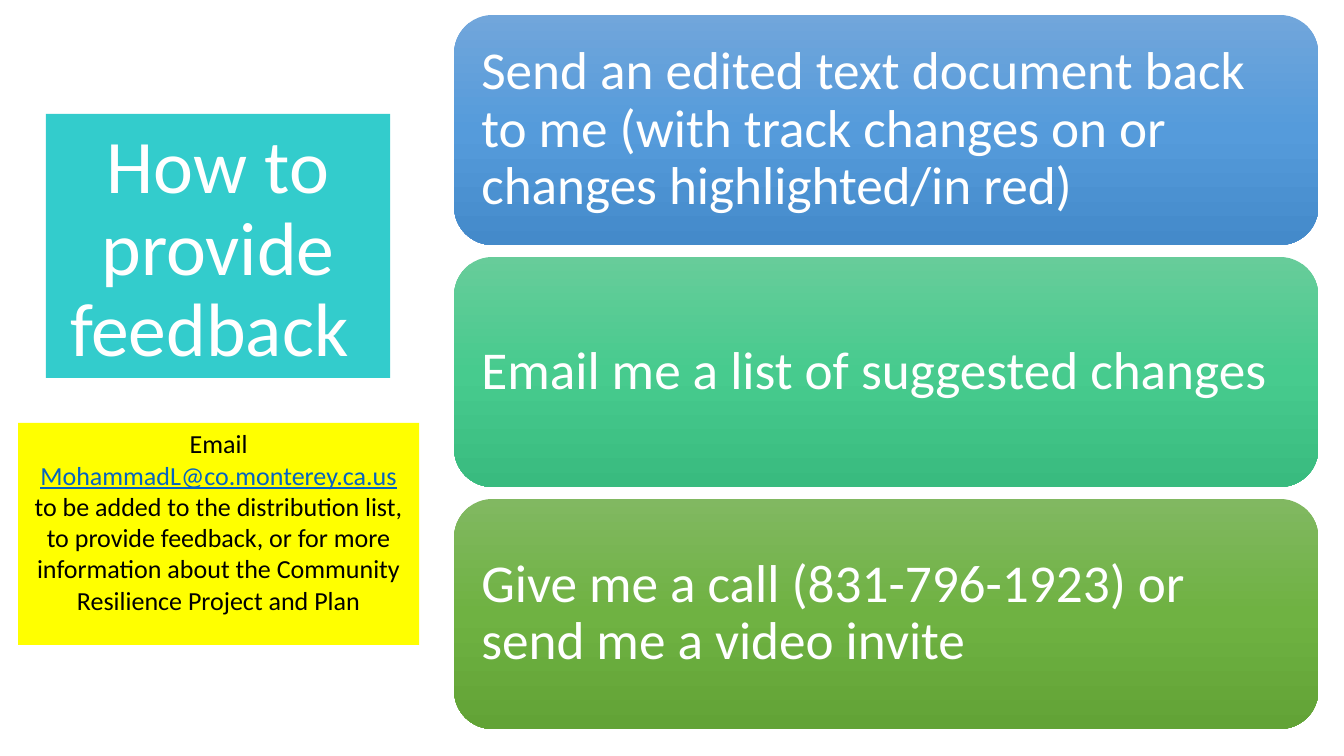
from copy import deepcopy

from pptx import Presentation
from pptx.dml.color import RGBColor
from pptx.enum.shapes import MSO_SHAPE as Shape
from pptx.enum.text import MSO_ANCHOR as Anchor, PP_ALIGN as Align
from pptx.oxml.ns import qn
from pptx.util import Inches, Pt

WHITE = RGBColor(0xFF, 0xFF, 0xFF)
BLACK = RGBColor(0x00, 0x00, 0x00)
TEAL = RGBColor(0x33, 0xCC, 0xCC)
YELLOW = RGBColor(0xFF, 0xFF, 0x00)
LINK_BLUE = RGBColor(0x05, 0x63, 0xC1)
BLUES = [RGBColor(0x71, 0xA6, 0xDB), RGBColor(0x55, 0x9B, 0xDB), RGBColor(0x44, 0x8A, 0xCA)]
MINTS = [RGBColor(0x67, 0xCC, 0x9A), RGBColor(0x47, 0xCB, 0x8E), RGBColor(0x39, 0xBB, 0x7F)]
GREENS = [RGBColor(0x81, 0xB8, 0x61), RGBColor(0x6F, 0xB2, 0x42), RGBColor(0x62, 0xA3, 0x36)]

# Content
TITLE = "How to provide feedback "
CONTACT = [
    ("Email ", BLACK, False),
    ("MohammadL@co.monterey.ca.us", LINK_BLUE, True),
    (" to be added to the distribution list, to provide feedback, or for more "
     "information about the Community Resilience Project and Plan", BLACK, False),
]
OPTIONS = [
    ("Send an edited text document back to me (with track changes on or "
     "changes highlighted/in red)", BLUES),
    ("Email me a list of suggested changes", MINTS),
    ("Give me a call (831-796-1923) or send me a video invite", GREENS),
]

# Layout in px
PX_PER_INCH = 100.8
TITLE_BOX = (46, 114, 344, 264)
CONTACT_BOX = (18, 423, 401, 222)
CARD_LEFT, CARD_TOP, CARD_WIDTH, CARD_HEIGHT, CARD_GAP = 454, 15, 864, 230, 12
CARD_INSET = 16


def px(length):
    return Inches(length / PX_PER_INCH)


def add_box(slide, kind, box, colors):
    shape = slide.shapes.add_shape(kind, *map(px, box))
    shape.shadow.inherit = False
    shape.line.fill.background()
    if len(colors) == 1:
        shape.fill.solid()
        shape.fill.fore_color.rgb = colors[0]
        return shape
    shape.fill.gradient()
    shape.fill.gradient_angle = 270
    # The default gradient has two stops; add the middle one
    stop_list = next(shape._element.iter(qn("a:gsLst")))
    stop_list.insert(1, deepcopy(stop_list[0]))
    for index, (stop, color) in enumerate(zip(shape.fill.gradient_stops, colors)):
        stop.position = index / (len(colors) - 1)
        stop.color.rgb = color
    return shape


def write_text(shape, runs, size, align=Align.LEFT, anchor=Anchor.TOP, spacing=1.0, inset=None):
    frame = shape.text_frame
    frame.word_wrap = True
    frame.vertical_anchor = anchor
    if inset is not None:
        frame.margin_left = frame.margin_right = px(inset)
        frame.margin_top = frame.margin_bottom = px(inset)
    paragraph = frame.paragraphs[0]
    paragraph.alignment = align
    paragraph.line_spacing = spacing
    for text, color, underline in runs:
        run = paragraph.add_run()
        run.text = text
        run.font.name = "Calibri"
        run.font.size = Pt(size)
        run.font.color.rgb = color
        run.font.underline = underline


def main():
    presentation = Presentation()
    presentation.slide_width, presentation.slide_height = Inches(13.33), Inches(7.5)
    slide = presentation.slides.add_slide(presentation.slide_layouts[6])

    # Title
    title = add_box(slide, Shape.RECTANGLE, TITLE_BOX, [TEAL])
    write_text(title, [(TITLE, WHITE, False)], 54, align=Align.CENTER,
               anchor=Anchor.BOTTOM, spacing=0.9)

    # Ways to give feedback
    for row, (text, colors) in enumerate(OPTIONS):
        top = CARD_TOP + row * (CARD_HEIGHT + CARD_GAP)
        card = add_box(slide, Shape.ROUNDED_RECTANGLE,
                       (CARD_LEFT, top, CARD_WIDTH, CARD_HEIGHT), colors)
        write_text(card, [(text, WHITE, False)], 38, anchor=Anchor.MIDDLE,
                   spacing=0.9, inset=CARD_INSET)

    # Contact note
    contact = add_box(slide, Shape.RECTANGLE, CONTACT_BOX, [YELLOW])
    write_text(contact, CONTACT, 18.6, align=Align.CENTER)

    presentation.save("out.pptx")


if __name__ == "__main__":
    main()
